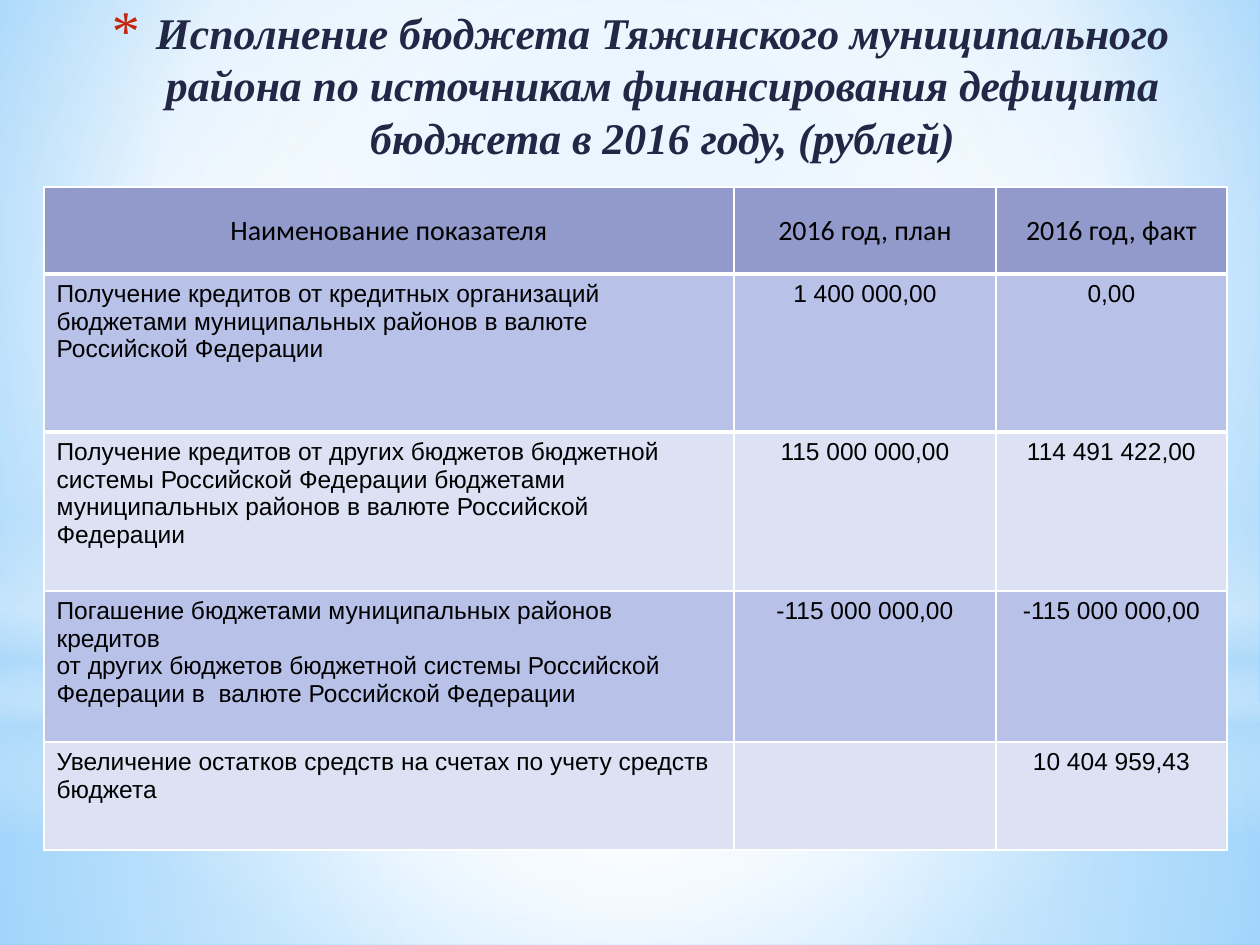
"""Build a slide on how a district budget deficit was financed in 2016."""
from lxml import etree
from pptx import Presentation, util as u
from pptx.dml.color import RGBColor
from pptx.enum import shapes, text
from pptx.oxml import ns

COLORS = {"ink": "000000", "title": "212745", "bullet": "C3260C", "white": "FFFFFF", "sky": "B4DCFA",
          "pale_blue": "9ED5FF", "deep_blue": "5BB9FF", "header": "919ACA", "odd": "B8C2E9", "even": "DCE1F4"}
TITLE = ("Исполнение бюджета Тяжинского муниципального района по источникам "
         "финансирования дефицита бюджета в 2016 году, (рублей)")
TITLE_BOX = (42, 0, 1197, 168)
ROWS = [
    ("Наименование показателя", "2016 год, план", "2016 год, факт"),
    ("Получение кредитов от кредитных организаций бюджетами муниципальных районов "
     "в валюте Российской Федерации", "1 400 000,00", "0,00"),
    ("Получение кредитов от других бюджетов бюджетной системы Российской Федерации "
     "бюджетами муниципальных районов в валюте Российской Федерации",
     "115 000 000,00", "114 491 422,00"),
    ("Погашение бюджетами муниципальных районов кредитов\n"
     "от других бюджетов бюджетной системы Российской Федерации в  валюте Российской Федерации",
     "-115 000 000,00", "-115 000 000,00"),
    ("Увеличение остатков средств на счетах по учету средств бюджета", "", "10 404 959,43"),
]
TABLE_LEFT, TABLE_TOP = 44, 187
COLUMN_WIDTHS = (690, 262, 231)
ROW_HEIGHTS = (87, 158, 159, 151, 108)
RULE_WIDTHS = (1, 3, 3, 1, 1, 1)
CENTER = (50, 50, 50, 50)
BACKDROP = [(0, "pale_blue", 100), (60, "white", 100), (100, "deep_blue", 100)]
GLOWS = [
    ("RECTANGLE", (0, 703, 1260, 242), [(0, "white", 91), (37, "white", 76), (100, "sky", 79)], CENTER),
    ("RECTANGLE", (0, 0, 1260, 703), [(0, "white", 89), (48, "white", 62), (100, "sky", 79)], CENTER),
    ("RECTANGLE", (0, 519, 1260, 315), [(0, "white", 0), (29, "white", 30), (45, "sky", 40),
                                        (55, "white", 26), (65, "sky", 60), (100, "white", 0)], None),
    ("OVAL", (0, 220, 1260, 703), [(0, "white", 100), (56, "white", 0)], CENTER),
]


def px(length):
    return u.Emu(round(length * 914400 / 126))


def place(box):
    return [px(length) for length in box]


def add(parent, tag, **attributes):
    child = etree.SubElement(parent, ns.qn(tag))
    for name, value in attributes.items():
        child.set(name, str(value))
    return child


def paint_gradient(fill, owner, stops, focus):
    fill.solid()
    fill.fore_color.rgb = RGBColor.from_string(COLORS["white"])
    solid = owner.find(".//" + ns.qn("a:solidFill"))
    gradient = etree.Element(ns.qn("a:gradFill"), rotWithShape="1")
    stop_list = add(gradient, "a:gsLst")
    for position, name, opacity in stops:
        stop = add(stop_list, "a:gs", pos=position * 1000)
        color = add(stop, "a:srgbClr", val=COLORS[name])
        if opacity < 100:
            add(color, "a:alpha", val=opacity * 1000)
    if focus:
        sides = {side: value * 1000 for side, value in zip("ltrb", focus)}
        add(add(gradient, "a:path", path="circle"), "a:fillToRect", **sides)
    else:
        add(gradient, "a:lin", ang=90 * 60000, scaled=0)
    solid.getparent().replace(solid, gradient)


def style_text(para, size, font, color, bold=False, italic=False):
    for span in para.runs:
        span.font.size, span.font.name = u.Pt(size), font
        span.font.bold, span.font.italic = bold, italic
        span.font.color.rgb = RGBColor.from_string(COLORS[color])


def add_title(page):
    box = page.shapes.add_textbox(*place(TITLE_BOX))
    frame = box.text_frame
    frame.word_wrap = True
    frame.vertical_anchor = text.MSO_ANCHOR.MIDDLE
    frame.text = TITLE
    para = frame.paragraphs[0]
    para.alignment = text.PP_ALIGN.CENTER
    style_text(para, 25, "Times New Roman", "title", bold=True, italic=True)
    properties = para._p.get_or_add_pPr()
    properties.set("marL", str(px(44)))
    properties.set("indent", str(-px(44)))
    add(add(properties, "a:buClr"), "a:srgbClr", val=COLORS["bullet"])
    add(properties, "a:buSzPct", val=128000)
    add(properties, "a:buFont", typeface="Times New Roman")
    add(properties, "a:buChar", char="*")


def add_borders(cell, row):
    properties = cell._tc.get_or_add_tcPr()
    widths = {"L": 1, "R": 1, "T": RULE_WIDTHS[row], "B": RULE_WIDTHS[row + 1]}
    for position, (side, width) in enumerate(widths.items()):
        border = add(properties, "a:ln" + side, w=u.Pt(width))
        add(add(border, "a:solidFill"), "a:srgbClr", val=COLORS["white"])
        properties.insert(position, border)


def fill_cell(cell, row, column, content):
    header = row == 0
    cell.fill.solid()
    shade = "header" if header else "odd" if row % 2 else "even"
    cell.fill.fore_color.rgb = RGBColor.from_string(COLORS[shade])
    add_borders(cell, row)
    cell.text_frame.text = content
    if header:
        cell.vertical_anchor = text.MSO_ANCHOR.MIDDLE
        cell.margin_left = cell.margin_top = cell.margin_right = px(1)
        cell.margin_bottom = 0
    for para in cell.text_frame.paragraphs:
        para.alignment = text.PP_ALIGN.CENTER if header or column else text.PP_ALIGN.LEFT
        style_text(para, 16 if header else 14, "Calibri" if header else "Arial", "ink")


def add_budget_table(page):
    box = (TABLE_LEFT, TABLE_TOP, sum(COLUMN_WIDTHS), sum(ROW_HEIGHTS))
    table = page.shapes.add_table(len(ROWS), len(COLUMN_WIDTHS), *place(box)).table
    table.first_row = table.horz_banding = False
    for column, width in zip(table.columns, COLUMN_WIDTHS):
        column.width = px(width)
    for row, (height, contents) in enumerate(zip(ROW_HEIGHTS, ROWS)):
        table.rows[row].height = px(height)
        for column, content in enumerate(contents):
            fill_cell(table.cell(row, column), row, column, content)


def main():
    deck = Presentation()
    deck.slide_width, deck.slide_height = px(1260), px(945)
    page = deck.slides.add_slide(deck.slide_layouts[6])
    paint_gradient(page.background.fill, page.element, BACKDROP, (20, 10, 20, 60))
    for kind, box, stops, focus in GLOWS:
        glow = page.shapes.add_shape(shapes.MSO_SHAPE[kind], *place(box))
        glow.shadow.inherit = False
        glow.line.fill.background()
        paint_gradient(glow.fill, glow.element, stops, focus)
    add_title(page)
    add_budget_table(page)
    deck.save("out.pptx")


if __name__ == "__main__":
    main()
